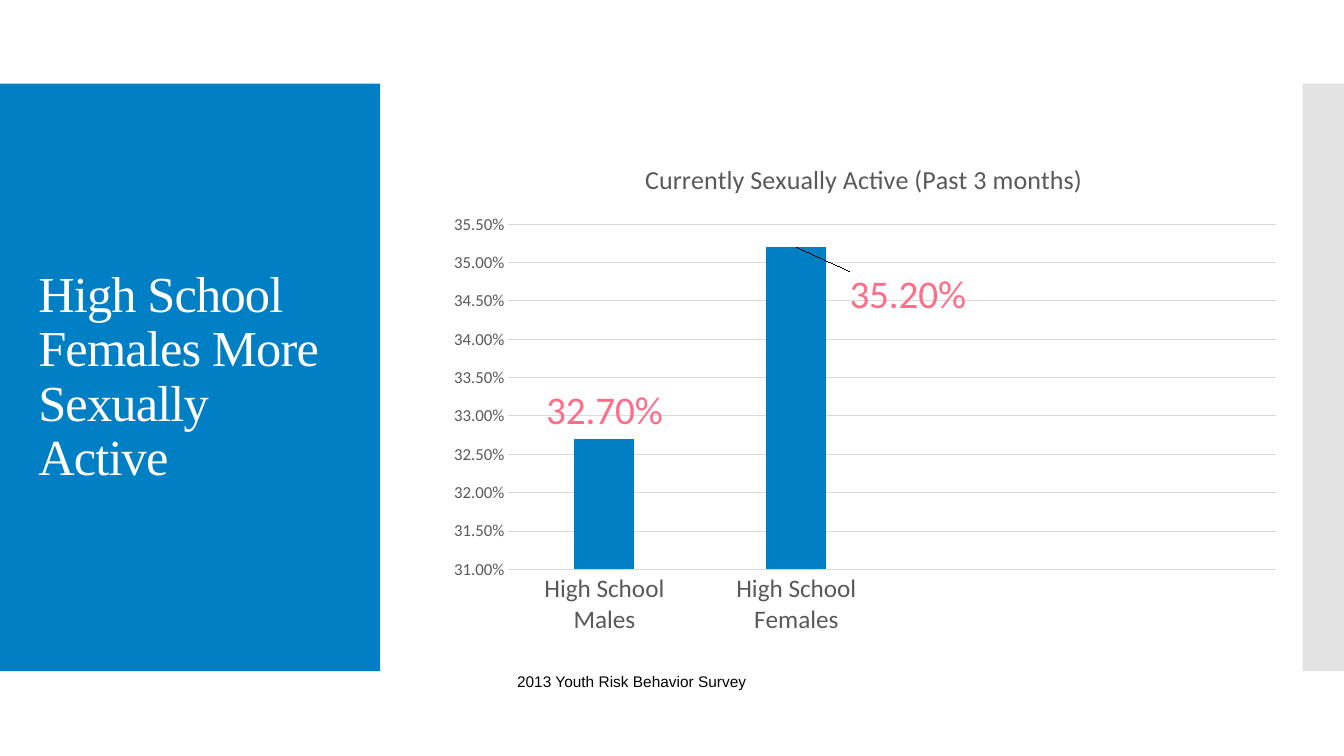
"""Build the slide on sexually active high school students."""
from dataclasses import dataclass

from lxml.etree import SubElement
from pptx import Presentation
from pptx.chart.data import CategoryChartData
from pptx.dml.color import RGBColor
from pptx.enum.chart import XL_CHART_TYPE as Kind, XL_LABEL_POSITION as Spot, XL_TICK_MARK as Tick
from pptx.enum.shapes import MSO_SHAPE as Form
from pptx.enum.text import MSO_ANCHOR as Anchor, MSO_AUTO_SIZE as Fit
from pptx.oxml import parse_xml
from pptx.oxml.ns import nsdecls, qn
from pptx.util import Inches, Pt

BLUE, GREY, PINK, RULE = "007FC4", "595959", "FF6D88", "D9D9D9"
TOPIC = "Currently Sexually Active (Past 3 months)"


@dataclass
class Panel:
    left: float
    width: float
    fill: str
    alpha: int = 100


@dataclass
class Bar:
    name: str
    value: float | None = None
    shift: tuple[float, float] = (0, 0)


PANELS = [Panel(0, 3.77, BLUE), Panel(12.92, 0.42, "C8C8C8", 50)]
BARS = [
    Bar("High School Males", 0.327, (0, -0.11)),
    Bar("High School Females", 0.352, (0.13, 0.04)),
    Bar(""),
    Bar(""),
]


def paint(target, color: str) -> None:
    target.rgb = RGBColor.from_string(color)


def style(font, size: float, color: str, name: str = "Calibri") -> None:
    font.size, font.name, font.bold = Pt(size), name, False
    paint(font.color, color)


def write(frame, text: str, *, size: float, color: str, name: str,
          space: float | None = None, track: int | None = None):
    para = frame.paragraphs[0]
    run = para.add_run()
    run.text = text
    style(run.font, size, color, name)
    if space:
        para.line_spacing = space
    if track:
        run.font._element.set("spc", str(track))


def draw_panel(slide, panel: Panel) -> None:
    box = slide.shapes.add_shape(Form.RECTANGLE, Inches(panel.left), Inches(0.83),
                                 Inches(panel.width), Inches(5.83))
    box.shadow.inherit = False
    box.line.fill.background()
    box.fill.solid()
    paint(box.fill.fore_color, panel.fill)
    if panel.alpha < 100:
        tone = box._element.spPr.find(".//" + qn("a:srgbClr"))
        SubElement(tone, qn("a:alpha")).set("val", str(panel.alpha * 1000))


def place(**values: float | str):
    tags = "".join(f'<c:{tag} val="{val}"/>' for tag, val in values.items())
    return parse_xml(f'<c:layout {nsdecls("c")}><c:manualLayout>{tags}</c:manualLayout></c:layout>')


def set_axes(chart) -> None:
    for axis, size in ((chart.category_axis, 18), (chart.value_axis, 12)):
        axis.major_tick_mark = axis.minor_tick_mark = Tick.NONE
        style(axis.tick_labels.font, size, GREY)
    scale = chart.value_axis
    scale.minimum_scale, scale.maximum_scale, scale.major_unit = 0.31, 0.355, 0.005
    scale.tick_labels.number_format = "0.00%"
    scale.tick_labels.number_format_is_linked = False
    scale.format.line.fill.background()
    for line in (chart.category_axis.format.line, scale.major_gridlines.format.line):
        line.width = Pt(0.75)
        paint(line.color, RULE)


def set_bars(chart) -> None:
    plot = chart.plots[0]
    plot.gap_width, plot.overlap, plot.vary_by_categories = 219, -27, False
    series = plot.series[0]
    series.format.fill.solid()
    paint(series.format.fill.fore_color, BLUE)
    labels = series.data_labels
    labels.show_value, labels.position = True, Spot.INSIDE_END
    labels.number_format, labels.number_format_is_linked = "0.00%", False
    style(labels.font, 28, PINK)
    known = [bar for bar in BARS if bar.value is not None]
    for spot, bar in enumerate(known):
        label = series.points[spot].data_label
        label.position = Spot.INSIDE_END
        style(label.font, 28, PINK)
    for node, bar in zip(series._element.iter(qn("c:dLbl")), known):
        node.insert(1, place(x=bar.shift[0], y=bar.shift[1]))


def draw_chart(slide) -> None:
    data = CategoryChartData(number_format="0.00%")
    data.categories = [bar.name for bar in BARS]
    data.add_series(TOPIC, [bar.value for bar in BARS])
    chart = slide.shapes.add_chart(Kind.COLUMN_CLUSTERED, Inches(4.32), Inches(1.4),
                                   Inches(8.5), Inches(5), data).chart
    chart.has_legend = False
    style(chart.font, 10, "000000")
    chart.has_title = True
    write(chart.chart_title.text_frame, TOPIC, size=18.6, color=GREY, name="Calibri")
    chart.chart_title.include_in_layout = False
    set_axes(chart)
    set_bars(chart)
    area = chart._chartSpace.find(".//" + qn("c:plotArea"))
    for old in area.findall(qn("c:layout")):
        area.remove(old)
    area.insert(0, place(layoutTarget="inner", xMode="edge", yMode="edge",
                         x=0.085, y=0.165, w=0.896, h=0.685))


def main() -> None:
    deck = Presentation()
    deck.slide_width, deck.slide_height = Inches(13.33), Inches(7.5)
    slide = deck.slides.add_slide(deck.slide_layouts[5])
    for panel in PANELS:
        draw_panel(slide, panel)

    title = slide.shapes.title
    title.left, title.top = Inches(0.28), Inches(1.23)
    title.width, title.height = Inches(3.22), Inches(5.03)
    slide.shapes._spTree.append(title._element)
    frame = title.text_frame
    frame.vertical_anchor, frame.word_wrap = Anchor.MIDDLE, True
    frame.auto_size = Fit.NONE
    write(frame, "High School Females More Sexually Active", size=36, color="FFFFFF",
          name="Times New Roman", space=0.9, track=-60)
    frame.paragraphs[0].alignment = 1

    draw_chart(slide)

    note = slide.shapes.add_textbox(Inches(5.03), Inches(6.62), Inches(2.51), Inches(0.29))
    note.text_frame.word_wrap = False
    note.text_frame.auto_size = Fit.SHAPE_TO_FIT_TEXT
    write(note.text_frame, "2013 Youth Risk Behavior Survey", size=11, color="000000", name="Arial")
    deck.save("out.pptx")


if __name__ == "__main__":
    main()
